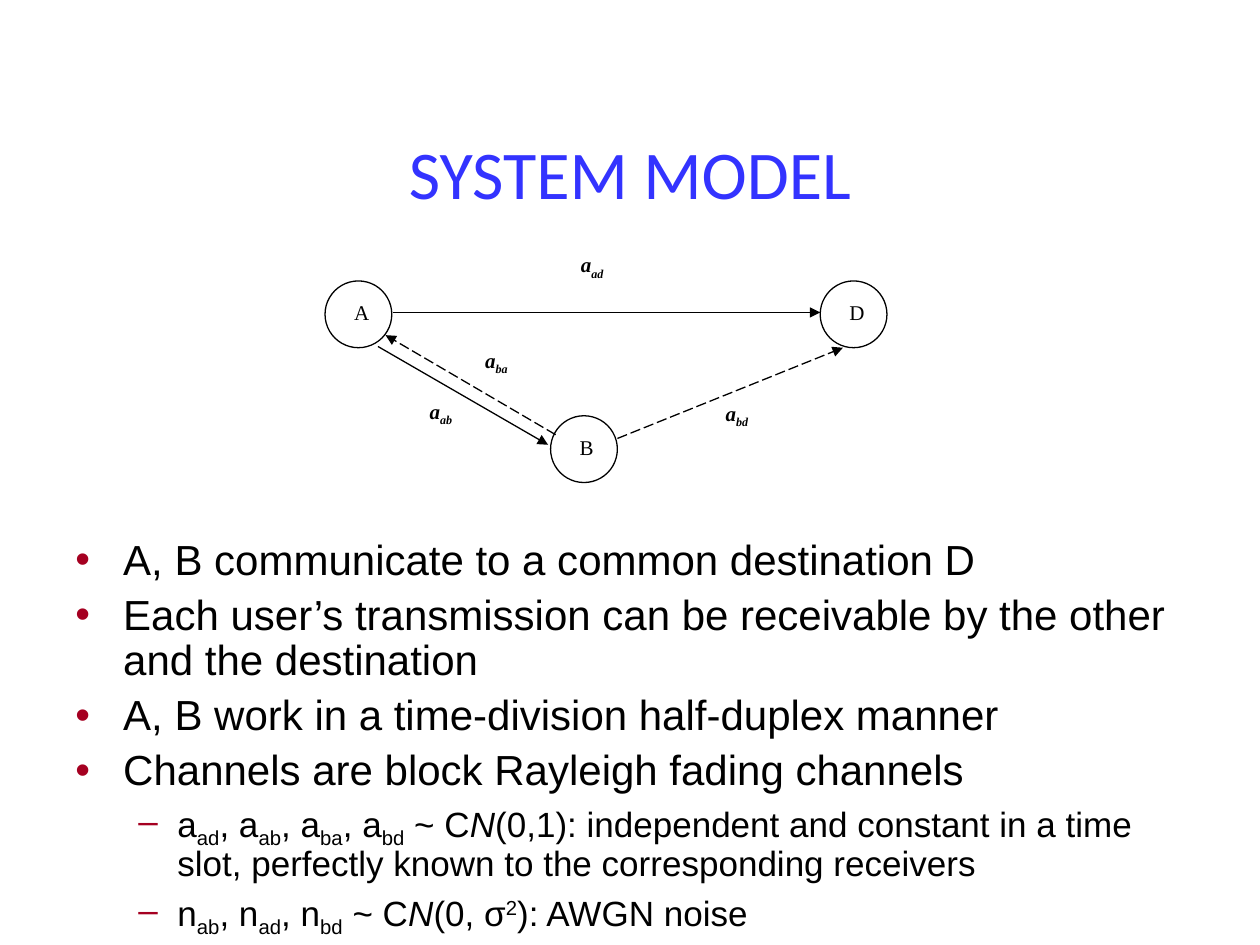
from lxml.etree import SubElement
from pptx import Presentation
from pptx.dml.color import RGBColor
from pptx.enum.dml import MSO_LINE
from pptx.enum.shapes import MSO_CONNECTOR, MSO_SHAPE
from pptx.enum.text import MSO_ANCHOR, PP_ALIGN
from pptx.oxml.ns import qn
from pptx.util import Inches, Pt

BLACK = RGBColor(0x00, 0x00, 0x00)
WHITE = RGBColor(0xFF, 0xFF, 0xFF)
BLUE = RGBColor(0x33, 0x33, 0xFF)
CRIMSON = RGBColor(0xA5, 0x00, 0x21)

SUB, SUPER, ITALIC = "sub", "super", "italic"
BASELINES = {SUB: "-25000", SUPER: "30000"}


def indexed(symbol, *indices):
    """Runs for a comma-separated list such as a_ad, a_ab."""
    runs = []
    for number, index in enumerate(indices):
        runs += [symbol if number == 0 else f", {symbol}", (index, SUB)]
    return runs


# Each paragraph is (level, runs); a run is plain text or (text, style).
POINTS = [
    (0, ["A, B communicate to a common destination D"]),
    (0, ["Each user’s transmission can be receivable by the other and the destination"]),
    (0, ["A, B work in a time-division half-duplex manner"]),
    (0, ["Channels are block Rayleigh fading channels"]),
    (1, indexed("a", "ad", "ab", "ba", "bd") + [
        " ~ C", ("N", ITALIC),
        "(0,1): independent and constant in a time slot, "
        "perfectly known to the corresponding receivers"]),
    (1, indexed("n", "ab", "ad", "bd") + [
        " ~ C", ("N", ITALIC), "(0, σ", ("2", SUPER), "): AWGN noise"]),
]
LEVELS = [
    dict(size=24, bullet="•", left=0.38, hanging=0.38, before=5.5),
    dict(size=20, bullet="–", left=0.81, hanging=0.31, before=4.6),
]

NODE_SIZE = 0.53
NODES = {"A": (2.58, 2.23), "B": (4.37, 3.3), "D": (6.51, 2.23)}
# channel: (from, to, dashed, label position)
CHANNELS = {
    "ad": ((3.12, 2.48), (6.51, 2.48), False, (4.61, 2)),
    "ab": ((3, 2.75), (4.35, 3.53), False, (3.41, 3.16)),
    "bd": ((4.9, 3.48), (6.69, 2.76), True, (5.76, 3.18)),
    "ba": ((4.41, 3.45), (3.06, 2.66), True, (3.85, 2.76)),
}


def add_bullet(paragraph, char, left, hanging):
    props = paragraph._p.get_or_add_pPr()
    props.set("marL", str(Inches(left)))
    props.set("indent", str(-Inches(hanging)))
    color = SubElement(props, qn("a:buClr"))
    SubElement(color, qn("a:srgbClr")).set("val", str(CRIMSON))
    SubElement(props, qn("a:buFont")).set("typeface", "Arial")
    SubElement(props, qn("a:buChar")).set("char", char)


def write(paragraph, runs, font, size, color=BLACK, bold=False, italic=False):
    for item in runs:
        text, style = (item, None) if isinstance(item, str) else item
        run = paragraph.add_run()
        run.text = text
        run.font.name = font
        run.font.size = Pt(size)
        run.font.color.rgb = color
        run.font.bold = bold
        run.font.italic = italic or style == ITALIC
        if style in BASELINES:
            run.font._element.set("baseline", BASELINES[style])


def add_frame(shapes, left, top, width, height, padded=True):
    box = shapes.add_textbox(*map(Inches, (left, top, width, height)))
    frame = box.text_frame
    frame.word_wrap = True
    if not padded:
        frame.margin_left = frame.margin_right = 0
        frame.margin_top = frame.margin_bottom = 0
    return frame


def add_node(shapes, name, left, top):
    circle = shapes.add_shape(
        MSO_SHAPE.OVAL, *map(Inches, (left, top, NODE_SIZE, NODE_SIZE)))
    circle.shadow.inherit = False
    circle.fill.solid()
    circle.fill.fore_color.rgb = WHITE
    circle.line.color.rgb = BLACK
    circle.line.width = Pt(0.75)
    label = add_frame(shapes, left + 0.23, top + 0.15, 0.18, 0.36, padded=False)
    write(label.paragraphs[0], [name], "Times New Roman", 12)


def add_channel(shapes, index, start, end, dashed, label_at):
    arrow = shapes.add_connector(
        MSO_CONNECTOR.STRAIGHT, *map(Inches, start + end))
    arrow.line.color.rgb = BLACK
    arrow.line.width = Pt(0.75)
    if dashed:
        arrow.line.dash_style = MSO_LINE.LONG_DASH
    SubElement(arrow.line._get_or_add_ln(), qn("a:tailEnd")).set("type", "triangle")
    SubElement(arrow._element.spPr, qn("a:effectLst"))
    label = add_frame(shapes, *label_at, 0.54, 0.53, padded=False)
    write(label.paragraphs[0], indexed("a", index), "Times New Roman", 12,
          bold=True, italic=True)


def main():
    prs = Presentation()
    prs.slide_width, prs.slide_height = Inches(10), Inches(7.5)
    slide = prs.slides.add_slide(prs.slide_layouts[6])

    title = add_frame(slide.shapes, 0.5, 0.83, 9, 1.08)
    title.vertical_anchor = MSO_ANCHOR.MIDDLE
    title.paragraphs[0].alignment = PP_ALIGN.CENTER
    write(title.paragraphs[0], ["SYSTEM MODEL"], "Calibri", 39, color=BLUE)

    body = add_frame(slide.shapes, 0.5, 4.23, 9, 3.02)
    for number, (level, runs) in enumerate(POINTS):
        style = LEVELS[level]
        paragraph = body.add_paragraph() if number else body.paragraphs[0]
        paragraph.level = level
        add_bullet(paragraph, style["bullet"], style["left"], style["hanging"])
        paragraph.line_spacing = 0.9
        if number:
            paragraph.space_before = Pt(style["before"])
        write(paragraph, runs, "Arial", style["size"])

    network = slide.shapes.add_group_shape().shapes
    for name, position in NODES.items():
        add_node(network, name, *position)
    for index, channel in CHANNELS.items():
        add_channel(network, index, *channel)

    prs.save("out.pptx")


if __name__ == "__main__":
    main()
